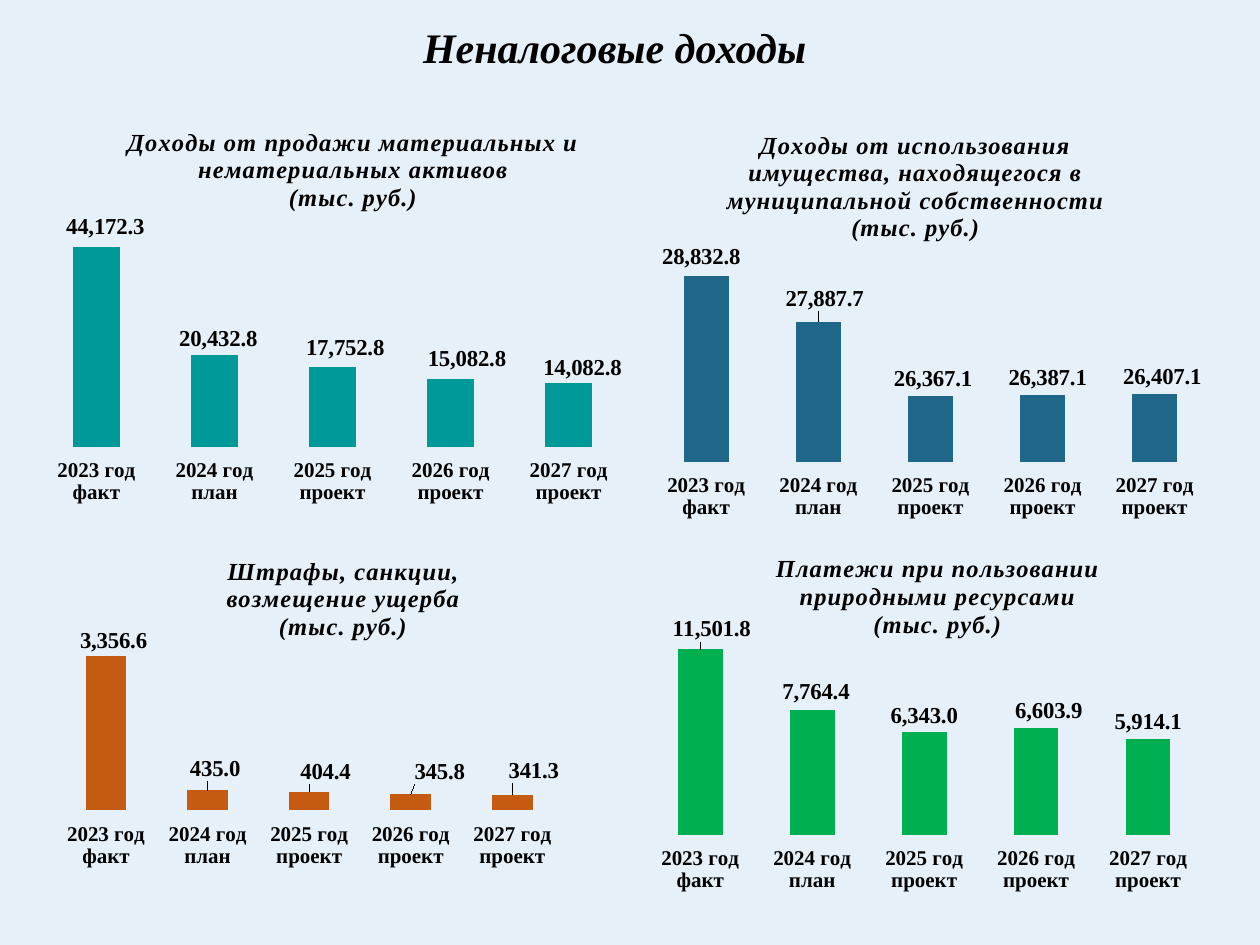
from lxml import etree
from pptx import Presentation, util as u
from pptx.chart.data import CategoryChartData
from pptx.dml.color import RGBColor
from pptx.enum import chart as ch, text as tx
from pptx.oxml.ns import qn

THEME = dict(font="Times New Roman", ink="000000", back="E6F0F9",
             head=24, title=14, label=13, axis=12)
FORMAT = "#,##0.0"
HEAD = "Неналоговые доходы "
YEARS = ["2023 год факт", "2024 год план", "2025 год проект",
         "2026 год проект", "2027 год проект"]

# box is in inches; spot and plot are shares of the chart;
# nudge moves each value label, in hundredths of an inch
CHARTS = [
    dict(title=["Доходы от продажи материальных и нематериальных активов",
                "(тыс. руб.)"],
         box=(0.2, 0.81, 4.88, 3.26), spot=(0.16, 0.05),
         plot=(0.02, 0.29, 0.96, 0.55), color="009999", scale=(0, 50000),
         vals=[44172.3, 20432.8, 17752.8, 15082.8, 14082.8],
         nudge=[(7, -2), (3, 2), (10, -1), (13, -2), (11, 2)]),
    dict(title=["Доходы от использования имущества, находящегося в "
                "муниципальной собственности", "(тыс. руб.)"],
         box=(5.16, 0.62, 4.45, 3.76), spot=(0.13, 0.1),
         plot=(0, 0.35, 1, 0.46), color="1E668A", scale=(25000, 29500),
         vals=[28832.8, 27887.7, 26367.1, 26387.1, 26407.1],
         nudge=[(-4, -1), (5, -4), (2, 1), (4, 1), (6, 1)]),
    dict(title=["Штрафы, санкции,", "возмещение ущерба", "(тыс. руб.)"],
         box=(0.35, 4.3, 4.43, 2.6), spot=(0.32, 0.03),
         plot=(0.02, 0.26, 0.91, 0.56), color="C55A11", scale=(0, 4000),
         vals=[3356.6, 435, 404.4, 345.8, 341.3],
         nudge=[(6, 2), (6, -3), (13, -2), (23, -4), (17, -5)]),
    dict(title=["Платежи при пользовании", "природными ресурсами",
                "(тыс. руб.)"],
         box=(4.92, 4.3, 4.83, 2.98), spot=(0.25, 0.02),
         plot=(0.04, 0.18, 0.92, 0.6), color="00B050", scale=(0, 14000),
         vals=[11501.8, 7764.4, 6343, 6603.9, 5914.1],
         nudge=[(9, -2), (3, 0), (0, 1), (10, 0), (0, 0)]),
]


def rgb(code):
    return RGBColor.from_string(code)


def style(font, size, bold=True, italic=False):
    font.name, font.size = THEME["font"], u.Pt(size)
    font.bold, font.italic = bold, italic
    font.color.rgb = rgb(THEME["ink"])


def write(frame, lines, size, track=0, **kind):
    """Fill a text frame with centred lines; track is in hundredths of a point."""
    for i, line in enumerate(lines):
        para = frame.add_paragraph() if i else frame.paragraphs[0]
        para.alignment = tx.PP_ALIGN.CENTER
        run = para.add_run()
        run.text = line
        style(run.font, size, **kind)
        if track:
            run.font._element.set("spc", str(track))


def place(node, at, **parts):
    """Give a chart node a manual layout at the given child index."""
    for old in node.findall(qn("c:layout")):
        node.remove(old)
    layout = etree.Element(qn("c:layout"))
    manual = etree.SubElement(layout, qn("c:manualLayout"))
    for key, val in parts.items():
        etree.SubElement(manual, qn("c:" + key)).set("val", str(val))
    node.insert(at, layout)


def add_bars(slide, item):
    data = CategoryChartData(number_format=FORMAT)
    data.categories = YEARS
    data.add_series("Series 1", item["vals"])
    box = [u.Inches(n) for n in item["box"]]
    chart = slide.shapes.add_chart(
        ch.XL_CHART_TYPE.COLUMN_CLUSTERED, *box, data).chart
    style(chart.font, THEME["title"], bold=False)
    chart.has_legend = False
    write(chart.chart_title.text_frame, item["title"], THEME["title"],
          track=50, italic=True)
    chart.chart_title.include_in_layout = False

    cats, vals = chart.category_axis, chart.value_axis
    style(cats.tick_labels.font, THEME["axis"])
    cats.format.line.fill.background()
    vals.visible = vals.has_major_gridlines = False
    vals.minimum_scale, vals.maximum_scale = item["scale"]

    plot = chart.plots[0]
    plot.gap_width, plot.vary_by_categories = 150, False
    bars = plot.series[0]
    bars.format.fill.solid()
    bars.format.fill.fore_color.rgb = rgb(item["color"])
    tags = bars.data_labels
    tags.show_value = True
    tags.number_format, tags.number_format_is_linked = FORMAT, False
    tags.position = ch.XL_LABEL_POSITION.OUTSIDE_END
    style(tags.font, THEME["label"])
    for i in range(len(YEARS)):
        tag = bars.points[i].data_label
        style(tag.font, THEME["label"])
        tag.position = ch.XL_LABEL_POSITION.OUTSIDE_END

    root = chart.element
    x, y = item["spot"]
    place(next(root.iter(qn("c:title"))), 1,
          xMode="edge", yMode="edge", x=x, y=y)
    x, y, w, h = item["plot"]
    place(next(root.iter(qn("c:plotArea"))), 0, layoutTarget="inner",
          xMode="edge", yMode="edge", x=x, y=y, w=w, h=h)
    wide, high = item["box"][2:]
    for node, (dx, dy) in zip(root.iter(qn("c:dLbl")), item["nudge"]):
        if dx or dy:
            place(node, 1, x=round(dx / 100 / wide, 4),
                  y=round(dy / 100 / high, 4))


def main():
    deck = Presentation()
    deck.slide_width, deck.slide_height = u.Inches(10), u.Inches(7.5)
    slide = deck.slides.add_slide(deck.slide_layouts[6])
    fill = slide.background.fill
    fill.solid()
    fill.fore_color.rgb = rgb(THEME["back"])
    box = [u.Inches(n) for n in (1.91, 0.12, 6.02, 0.5)]
    frame = slide.shapes.add_textbox(*box).text_frame
    frame.word_wrap = True
    write(frame, [HEAD], THEME["head"], italic=True)
    for item in CHARTS:
        add_bars(slide, item)
    deck.save("out.pptx")


if __name__ == "__main__":
    main()
